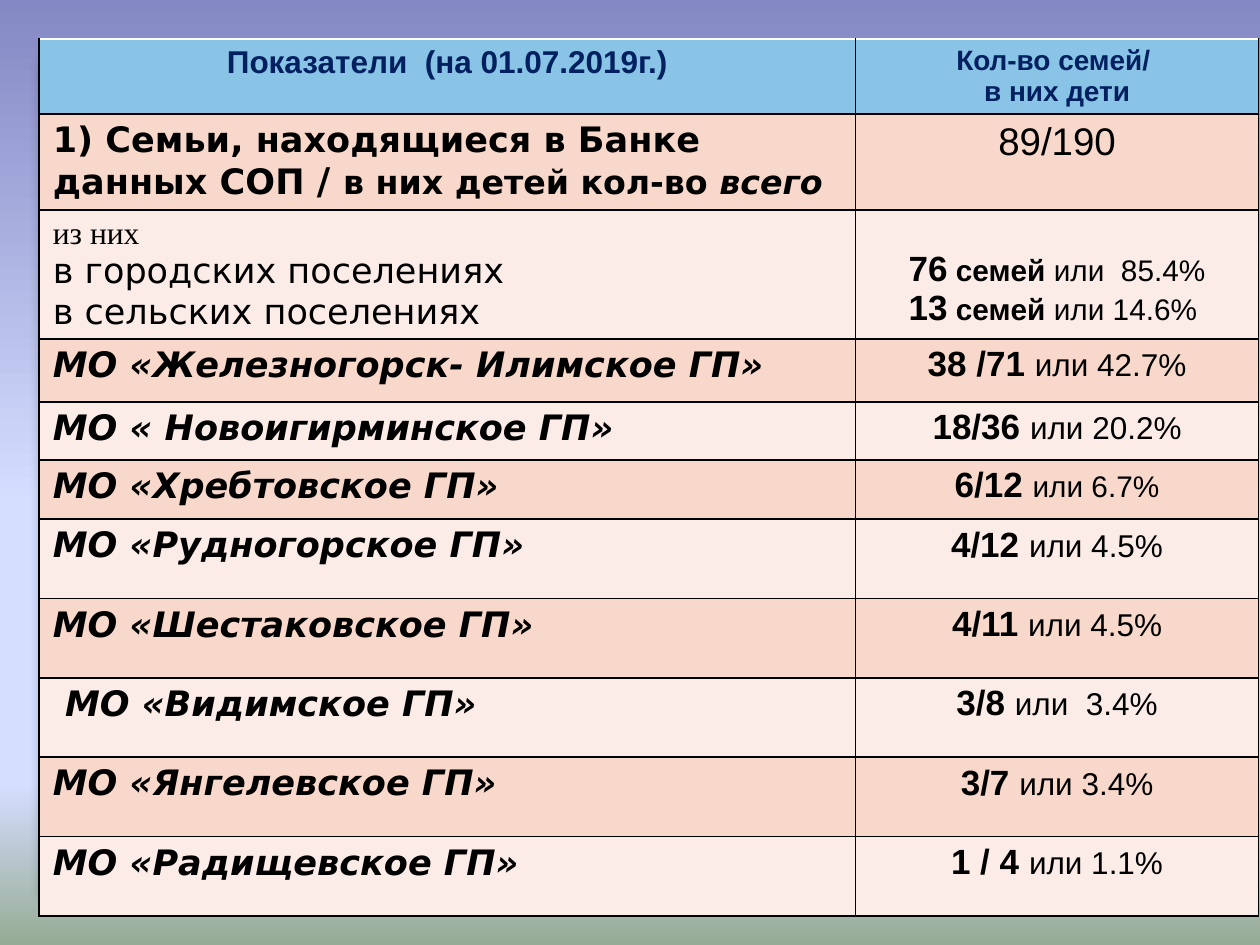
from dataclasses import dataclass, field

from lxml.etree import SubElement as Sub
from pptx import Presentation
from pptx.dml.color import RGBColor as RGB
from pptx.enum.shapes import MSO_SHAPE as Shape
from pptx.enum.text import PP_ALIGN as Align
from pptx.oxml.ns import qn
from pptx.util import Inches, Pt


def style(size, name="Arial", bold=False, italic=False):
    return dict(size=Pt(size), name=name, bold=bold, italic=italic)


@dataclass
class Theme:
    ink: str = "000000"
    navy: str = "002060"
    white: str = "FFFFFF"
    edge: str = "A4A4A4"
    head: str = "89C3E5"
    bands: tuple = ("F9D8CC", "FCECE7")
    sky: tuple = ((0, "8488C4"), (53, "D4DEFF"), (83, "D4DEFF"), (100, "96AB94"))
    fonts: dict = field(default_factory=lambda: {
        "head": style(18, bold=True),
        "sub": style(16, bold=True),
        "lead": style(20, "DejaVu Sans", True),
        "slash": style(21, "DejaVu Sans", True),
        "kids": style(19, "DejaVu Sans", True),
        "all": style(19, "DejaVu Sans", True, True),
        "total": style(22),
        "of": style(18, "Times New Roman"),
        "area": style(20, "DejaVu Sans"),
        "town": style(20, "DejaVu Sans", True, True),
        "count": style(20, bold=True),
        "unit": style(17, bold=True),
        "small": style(17),
        "share": style(18),
    })


THEME = Theme()

HEAD = (
    [[("Показатели  (на 01.07.2019г.)", "head")]],
    [[("Кол-во семей/ ", "sub")], [("в них дети", "sub")]],
)
BANK = (
    [[("1) Семьи, находящиеся в Банке данных СОП ", "lead"), ("/ ", "slash"),
      ("в них детей кол-во ", "kids"), ("всего", "all")]],
    [[("89/190", "total")]],
)
SPLIT = (
    [[("из них", "of")], [("в городских поселениях", "area")],
     [("в сельских поселениях", "area")]],
    [[("76", "count"), (" семей ", "unit"), ("или  85.4%", "small")],
     [("13", "count"), (" семей ", "unit"), ("или 14.6% ", "small")]],
)
TOWNS = [
    ("МО «Железногорск- Илимское ГП»", "38 /71 ", "или 42.7%", "share"),
    ("МО « Новоигирминское ГП»", "18/36 ", "или 20.2%", "share"),
    ("МО «Хребтовское ГП»", "6/12 ", "или 6.7%", "small"),
    ("МО «Рудногорское ГП»", "4/12 ", "или 4.5%", "share"),
    ("МО «Шестаковское ГП»", "4/11 ", "или 4.5%", "share"),
    (" МО «Видимское ГП»", "3/8 ", "или  3.4%", "share"),
    ("МО «Янгелевское ГП»", "3/7 ", "или 3.4%", "share"),
    ("МО «Радищевское ГП»", "1 / 4 ", "или 1.1%", "share"),
]
COLS = [6.48, 3.2]
ROWS = [0.47, 0.71, 0.74, 0.5, 0.46, 0.47] + [0.63] * 5


def paint_sky(slide):
    fill = slide.background.fill
    fill.gradient()
    fill.gradient_angle = 270
    stops = next(slide.element.iter(qn("a:gsLst")))
    for old in list(stops):
        stops.remove(old)
    for pos, color in THEME.sky:
        stop = Sub(stops, qn("a:gs"), pos=str(pos * 1000))
        Sub(stop, qn("a:srgbClr"), val=color)


def add_panel(slide):
    box = [Inches(n) for n in (0.33, 0.36, 9.33, 6.78)]
    panel = slide.shapes.add_shape(Shape.ROUNDED_RECTANGLE, *box)
    panel.adjustments[0] = 0.02
    panel.fill.solid()
    panel.fill.fore_color.rgb = RGB.from_string(THEME.white)
    panel.line.color.rgb = RGB.from_string(THEME.edge)
    panel.line.width = Pt(0.16)
    panel.shadow.inherit = False
    effects = next(panel.element.iter(qn("a:effectLst")))
    shade = Sub(effects, qn("a:outerShdw"), blurRad=str(Pt(6)),
                dist=str(Pt(4)), dir="5400000", rotWithShape="0")
    color = Sub(shade, qn("a:srgbClr"), val=THEME.ink)
    Sub(color, qn("a:alpha"), val="25000")


def add_edges(cell, top):
    props = cell._tc.get_or_add_tcPr()
    for side in "LRTB":
        line = Sub(props, qn(f"a:ln{side}"), w=str(Pt(1)))
        fill = Sub(line, qn("a:solidFill"))
        Sub(fill, qn("a:srgbClr"), val=top if side == "T" else THEME.ink)


def add_text(cell, paras, color, align):
    frame = cell.text_frame
    for i, runs in enumerate(paras):
        para = frame.add_paragraph() if i else frame.paragraphs[0]
        para.alignment = align
        for text, kind in runs:
            run = para.add_run()
            run.text = text
            run.font.color.rgb = RGB.from_string(color)
            for key, value in THEME.fonts[kind].items():
                setattr(run.font, key, value)


def fill_cell(cell, paras, row, col):
    head = row == 0
    pads = dict(margin_left=0.11, margin_right=0.11,
                margin_top=0.05, margin_bottom=0.05)
    for key, value in pads.items():
        setattr(cell, key, Inches(value))
    add_edges(cell, THEME.white if head else THEME.ink)
    cell.fill.solid()
    back = THEME.head if head else THEME.bands[(row - 1) % 2]
    cell.fill.fore_color.rgb = RGB.from_string(back)
    align = Align.CENTER if head or col else Align.LEFT
    add_text(cell, paras, THEME.navy if head else THEME.ink, align)


def add_grid(slide, data):
    left = top = Inches(0.31)
    table = slide.shapes.add_table(len(ROWS), len(COLS), left, top,
                                   Inches(sum(COLS)), Inches(sum(ROWS))).table
    table.first_row = table.horz_banding = False
    for col, width in zip(table.columns, COLS):
        col.width = Inches(width)
    for row, height in zip(table.rows, ROWS):
        row.height = Inches(height)
    for r, line in enumerate(data):
        for c, paras in enumerate(line):
            fill_cell(table.cell(r, c), paras, r, c)
    return table


def main():
    deck = Presentation()
    deck.slide_width, deck.slide_height = Inches(10), Inches(7.5)
    slide = deck.slides.add_slide(deck.slide_layouts[6])
    paint_sky(slide)
    add_panel(slide)
    towns = [([[(town, "town")]], [[(count, "count"), (share, kind)]])
             for town, count, share, kind in TOWNS]
    table = add_grid(slide, [HEAD, BANK, SPLIT] + towns)
    table.cell(2, 1).margin_top = Inches(0.32)
    deck.save("out.pptx")


if __name__ == "__main__":
    main()
